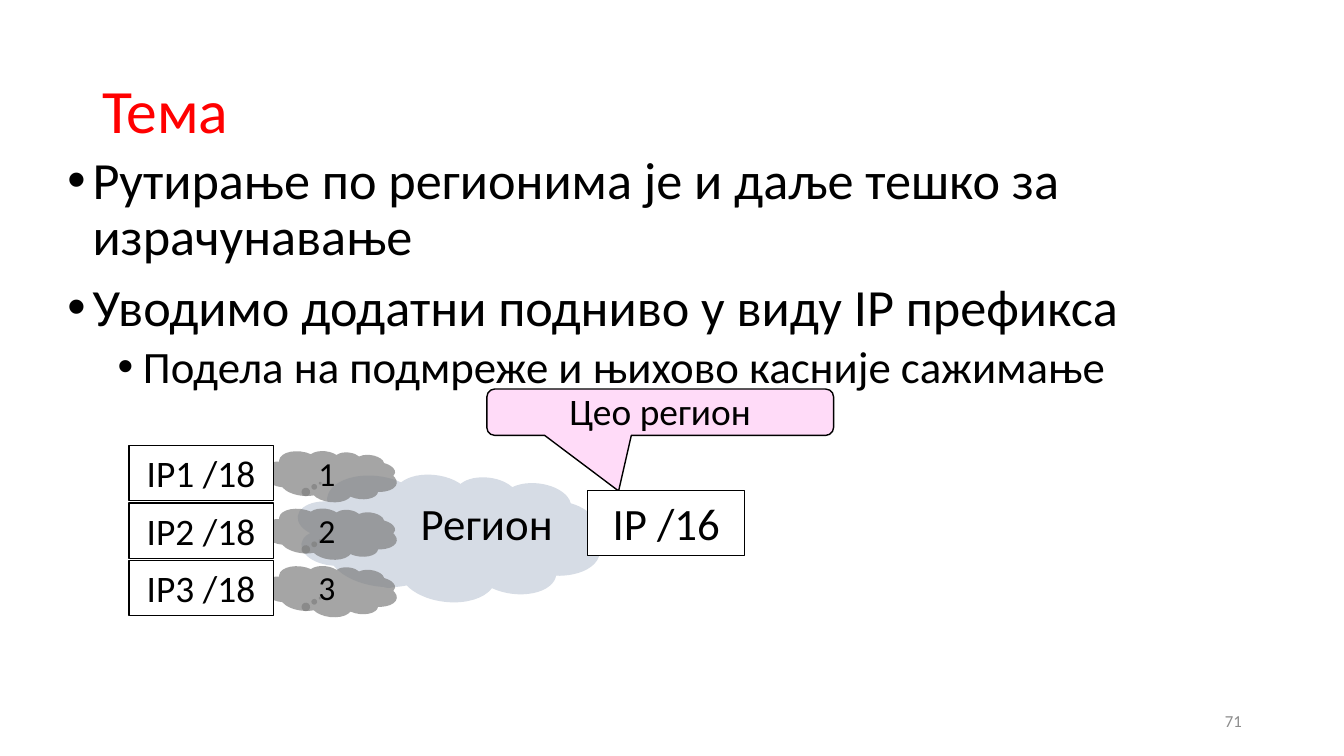
from dataclasses import dataclass

from lxml.etree import SubElement
from pptx import Presentation
from pptx.dml.color import RGBColor
from pptx.enum.shapes import MSO_SHAPE
from pptx.enum.text import MSO_ANCHOR, PP_ALIGN
from pptx.oxml.ns import qn
from pptx.util import Inches, Pt

COLORS = {"title": "FF0000", "text": "000000", "number": "8C8C8C", "label": "FFFFFF",
          "callout": "FFB8F2", "region": "D6DCE5", "subnet": "7F7F7F"}
FONT = "Calibri"
WIDTH, HEIGHT = Inches(13.33), Inches(7.5)
COLUMNS, ROWS = 160, 90
SUBNET_PITCH = 6.84
CLOUD_TAIL = (-0.08, 0.16)
BULLETS = [("Рутирање по регионима је и даље тешко за израчунавање", 0),
           ("Уводимо додатни подниво у виду IP префикса", 0),
           ("Подела на подмреже и њихово касније сажимање", 1)]
BULLET_STYLES = [(0.25, 37.3, 10), (0.75, 32, 5)]


@dataclass
class Box:
    """A rectangle in grid columns and rows."""
    left: float
    top: float
    width: float
    height: float

    def inner(self, left, top, width, height):
        """Return a box placed relative to this one's corner."""
        return Box(self.left + left, self.top + top, width, height)

    def lengths(self):
        """Return left, top, width and height in slide units."""
        column, row = WIDTH / COLUMNS, HEIGHT / ROWS
        return (round(self.left * column), round(self.top * row),
                round(self.width * column), round(self.height * row))


def add_run(paragraph, text, size, color="text"):
    """Append one styled run."""
    run = paragraph.add_run()
    run.text = text
    run.font.name = FONT
    run.font.size = Pt(size)
    run.font.color.rgb = RGBColor.from_string(COLORS[color])


def write_line(shape, text, size, align=PP_ALIGN.CENTER, anchor=MSO_ANCHOR.TOP,
               color="text", wrap=True):
    """Write a single paragraph into a shape."""
    frame = shape.text_frame
    frame.word_wrap = wrap
    frame.vertical_anchor = anchor
    paragraph = frame.paragraphs[0]
    paragraph.alignment = align
    add_run(paragraph, text, size, color)
    return paragraph


def add_text(slide, box, text, size, **style):
    """Add a text box with a single paragraph."""
    return write_line(slide.shapes.add_textbox(*box.lengths()), text, size, **style)


def add_figure(slide, kind, box, fill, line=None, line_width=1, opacity=100, adjustments=()):
    """Add a filled preset shape."""
    shape = slide.shapes.add_shape(kind, *box.lengths())
    shape.shadow.inherit = False
    for index, value in enumerate(adjustments):
        shape.adjustments[index] = value
    shape.fill.solid()
    shape.fill.fore_color.rgb = RGBColor.from_string(COLORS[fill])
    if opacity < 100:
        color = shape._element.spPr.find(qn("a:solidFill"))[0]
        SubElement(color, qn("a:alpha")).set("val", str(opacity * 1000))
    if line:
        shape.line.color.rgb = RGBColor.from_string(COLORS[line])
        shape.line.width = Pt(line_width)
    else:
        shape.line.fill.background()
    return shape


def add_cloud(slide, box, fill, **style):
    """Add a slightly turned cloud."""
    cloud = add_figure(slide, MSO_SHAPE.CLOUD_CALLOUT, box, fill,
                       adjustments=CLOUD_TAIL, **style)
    cloud.rotation = 6.6


def add_label(slide, box, text, size):
    """Add a framed address label."""
    label = add_figure(slide, MSO_SHAPE.RECTANGLE, box, "label", "text", 0.75)
    write_line(label, text, size)


def add_title(slide, box):
    """Add the slide title."""
    paragraph = add_text(slide, box, "Тема", 44, align=PP_ALIGN.LEFT,
                         anchor=MSO_ANCHOR.MIDDLE, color="title")
    paragraph.line_spacing = 0.9


def add_bullets(slide, box):
    """Add the two-level bullet list."""
    frame = slide.shapes.add_textbox(*box.lengths()).text_frame
    frame.word_wrap = True
    for index, (text, level) in enumerate(BULLETS):
        paragraph = frame.add_paragraph() if index else frame.paragraphs[0]
        indent, size, space = BULLET_STYLES[level]
        paragraph.level = level
        paragraph.line_spacing = 0.9
        paragraph.space_before = Pt(space if index else 0)
        properties = paragraph._p.get_or_add_pPr()
        properties.set("marL", str(Inches(indent)))
        properties.set("indent", str(Inches(-0.25)))
        SubElement(properties, qn("a:buFont")).set("typeface", "Arial")
        SubElement(properties, qn("a:buChar")).set("char", "•")
        add_run(paragraph, text, size)


def add_subnet(slide, box, number):
    """Add one subnet cloud with its number and address label."""
    add_cloud(slide, box.inner(16.32, 0.6, 15.6, 6.12), "subnet", opacity=70)
    add_text(slide, box.inner(21.36, 0.24, 4.44, 6), str(number), 24,
             align=PP_ALIGN.LEFT, wrap=False)
    add_label(slide, box.inner(0, 0, 17.16, 6.6), f"IP{number} /18", 26.7)


def add_region_diagram(slide, box):
    """Add the region cloud, its callout, prefix and subnets."""
    callout = add_figure(slide, MSO_SHAPE.ROUNDED_RECTANGULAR_CALLOUT,
                         box.inner(42.6, 0, 41.28, 5.52), "callout", "text",
                         opacity=50, adjustments=(-0.12, 1.7, 0.17))
    frame = callout.text_frame
    frame.margin_left = frame.margin_right = frame.margin_bottom = 0
    write_line(callout, "Цео регион", 26.7, anchor=MSO_ANCHOR.BOTTOM)
    add_cloud(slide, box.inner(20.04, 10.08, 36, 15.12), "region", line="region")
    add_text(slide, box.inner(31.92, 12.12, 21.36, 7.68), "Регион", 32)
    for index in range(3):
        row = box.inner(0, 6.72 + index * SUBNET_PITCH, 31.92, SUBNET_PITCH)
        add_subnet(slide, row, index + 1)
    add_label(slide, box.inner(54.6, 12.12, 18.72, 7.68), "IP /16", 32)


def add_slide_number(slide, box):
    """Add the slide number."""
    add_text(slide, box, "71", 12, align=PP_ALIGN.RIGHT,
             anchor=MSO_ANCHOR.MIDDLE, color="number")


def main():
    """Build and save the presentation."""
    presentation = Presentation()
    presentation.slide_width, presentation.slide_height = WIDTH, HEIGHT
    slide = presentation.slides.add_slide(presentation.slide_layouts[6])
    add_title(slide, Box(11, 4.8, 138, 17.4))
    add_bullets(slide, Box(6.84, 17.76, 149, 62.64))
    add_region_diagram(slide, Box(15.36, 46.32, 83.88, 27.12))
    add_slide_number(slide, Box(113.04, 83.4, 36, 4.8))
    presentation.save("out.pptx")


if __name__ == "__main__":
    main()
